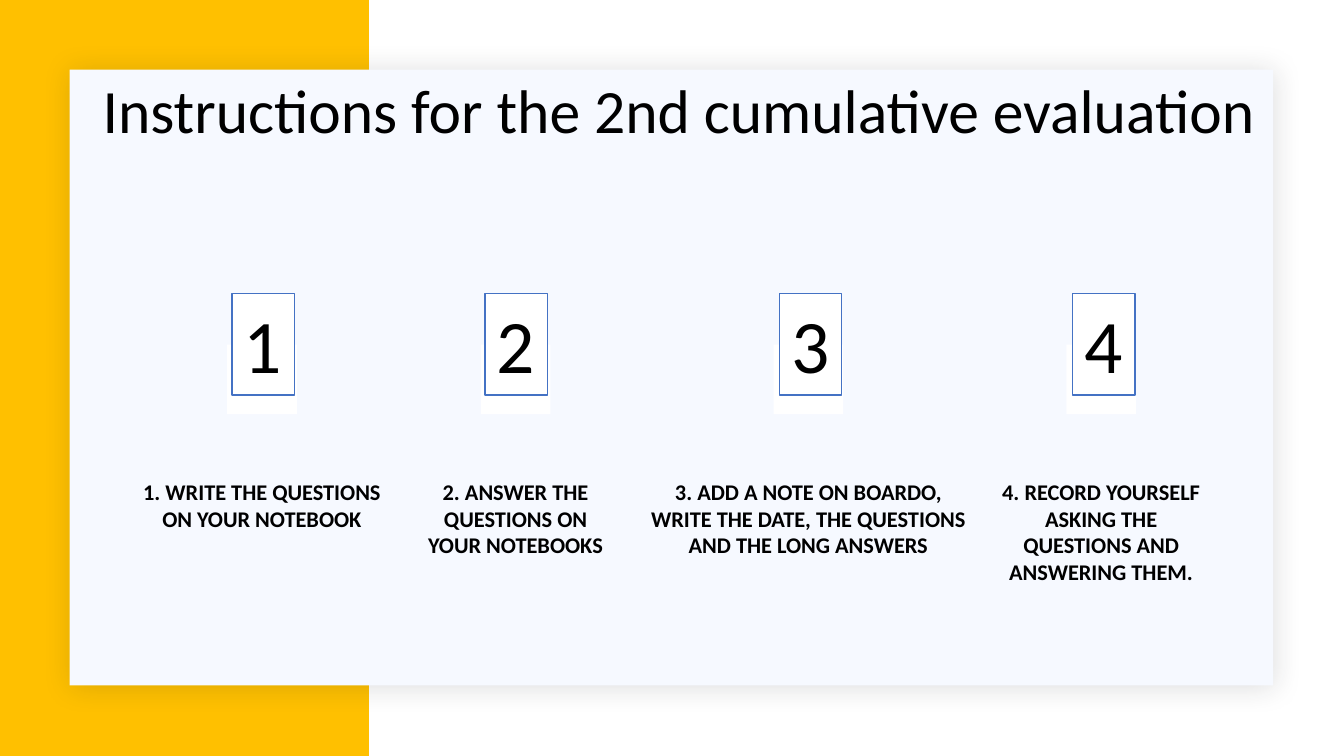
"""Build a slide of four numbered steps for the 2nd cumulative evaluation."""
from lxml import etree
from pptx import Presentation, util as u
from pptx.dml.color import RGBColor
from pptx.enum import shapes, text
from pptx.oxml.ns import qn

Pt = u.Pt
deck = Presentation()
deck.slide_width, deck.slide_height = Pt(960), Pt(540)
slide = deck.slides.add_slide(deck.slide_layouts[6])


def block(x, y, w, h, fill, edge=None):
    item = slide.shapes.add_shape(
        shapes.MSO_SHAPE.RECTANGLE, Pt(x), Pt(y), Pt(w), Pt(h))
    item.shadow.inherit = False
    item.fill.solid()
    item.fill.fore_color.rgb = RGBColor.from_string(fill)
    if edge:
        item.line.color.rgb = RGBColor.from_string(edge)
        item.line.width = Pt(1)
    else:
        item.line.fill.background()
    return item


def write(item, words, size, frame, para, bold=False):
    body = item.text_frame
    for key, val in frame.items():
        setattr(body, key, val)
    line = body.paragraphs[0]
    for key, val in para.items():
        setattr(line, key, val)
    run = line.add_run()
    run.text = words
    look = {"name": "Calibri", "size": Pt(size), "bold": bold}
    for key, val in look.items():
        setattr(run.font, key, val)
    run.font.color.rgb = RGBColor.from_string("000000")


block(0, 0, 263.5, 540, "FFC000")
panel = block(49.7, 49.7, 859.7, 439.9, "F6F9FF")
glow = etree.SubElement(
    panel.shadow._element.find(qn("a:effectLst")), qn("a:outerShdw"),
    blurRad=str(Pt(20)), dist=str(Pt(2)), dir=str(45 * 60000),
    algn="ctr", rotWithShape="0")
tint = etree.SubElement(glow, qn("a:srgbClr"), val="1F2125")
etree.SubElement(tint, qn("a:alpha"), val="15000")

title = slide.shapes.add_textbox(Pt(66.2), Pt(28.8), Pt(861.1), Pt(104.4))
write(title, "Instructions for the 2nd cumulative evaluation", 44,
      {"word_wrap": True, "vertical_anchor": text.MSO_ANCHOR.MIDDLE},
      {"line_spacing": 0.9})

mid = {"alignment": text.PP_ALIGN.CENTER}
flush = {"margin_left": 0, "margin_top": 0, "margin_right": 0,
         "margin_bottom": 0, "word_wrap": True}
snug = {"word_wrap": False, "vertical_anchor": text.MSO_ANCHOR.TOP,
        "auto_size": text.MSO_AUTO_SIZE.SHAPE_TO_FIT_TEXT}
tile, card = 49.7, 44.6
steps = [
    (102.2, 169.9, 165.6, "WRITE THE QUESTIONS ON YOUR NOTEBOOK"),
    (297.4, 141.8, 346.3, "ANSWER THE QUESTIONS ON YOUR NOTEBOOKS"),
    (463.7, 227.5, 556.6,
     "ADD A NOTE ON BOARDO, WRITE THE DATE, THE QUESTIONS AND "
     "THE LONG ANSWERS"),
    (715.7, 141.8, 766.1,
     "RECORD YOURSELF ASKING THE QUESTIONS AND ANSWERING THEM."),
]
for num, (left, wide, edge, words) in enumerate(steps, 1):
    block(left + (wide - tile) / 2, 246.2, tile, tile, "FFFFFF")
    note = slide.shapes.add_textbox(Pt(left), Pt(341.3), Pt(wide), Pt(61.2))
    write(note, f"{num}. {words}", 16, flush, mid, True)
    box = block(edge, 209.5, card, 72.7, "FFFFFF", "4472C4")
    write(box, str(num), 54, snug, mid)

deck.save("out.pptx")
